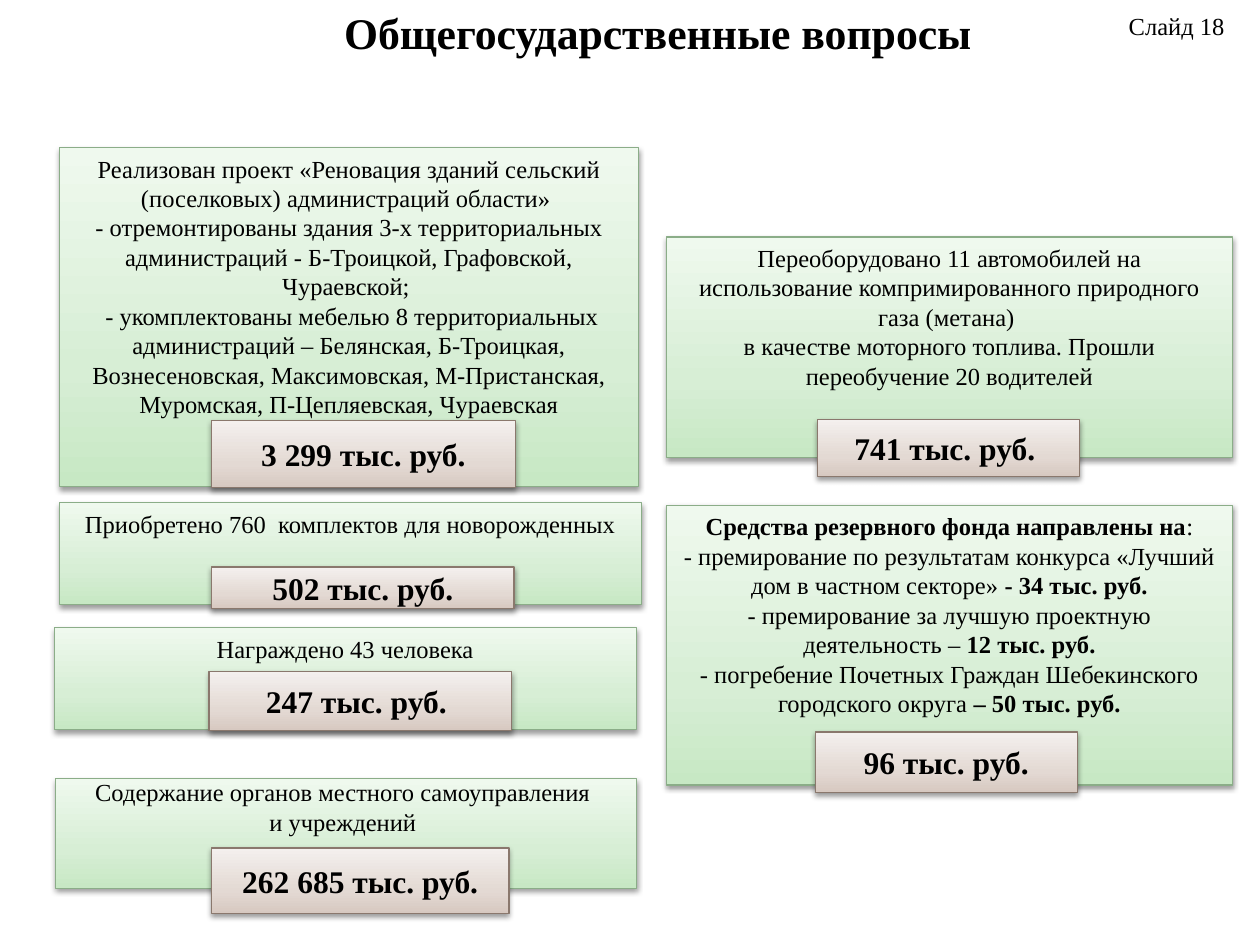
from copy import deepcopy

from lxml import etree
from pptx import Presentation
from pptx.dml.color import RGBColor
from pptx.enum.shapes import MSO_SHAPE
from pptx.enum.text import MSO_ANCHOR, MSO_AUTO_SIZE, PP_ALIGN
from pptx.oxml.ns import qn
from pptx.util import Pt

PX = 9144
RECTANGLE = MSO_SHAPE.RECTANGLE
TOP, MIDDLE = MSO_ANCHOR.TOP, MSO_ANCHOR.MIDDLE
LEFT, CENTER = PP_ALIGN.LEFT, PP_ALIGN.CENTER
NO_AUTOFIT = MSO_AUTO_SIZE.NONE

BLACK = RGBColor(0x00, 0x00, 0x00)
GREEN_LINE = RGBColor(0x8B, 0xAD, 0x88)
GREEN_STOPS = (RGBColor(0xC7, 0xE8, 0xC4), RGBColor(0xD7, 0xEE, 0xD5), RGBColor(0xEF, 0xF9, 0xEE))
BROWN_LINE = RGBColor(0x8A, 0x78, 0x6D)
BROWN_STOPS = (RGBColor(0xD7, 0xC9, 0xC1), RGBColor(0xE3, 0xD9, 0xD3), RGBColor(0xF4, 0xF0, 0xEE))
STOP_POSITIONS = (0, 0.35, 1)

FONT = "Times New Roman"
BODY = {"name": FONT, "size": Pt(14), "bold": False}
AMOUNT = {"name": FONT, "size": Pt(18), "bold": True}
HEADING = {"name": FONT, "size": Pt(25), "bold": True}

CARDS = [
    ((47, 117, 460, 269),
     [[("Реализован проект «Реновация зданий сельский (поселковых) администраций области» \n"
        "- отремонтированы здания 3-х территориальных администраций - Б-Троицкой, Графовской, Чураевской; \n"
        " - укомплектованы мебелью 8 территориальных администраций – Белянская, Б-Троицкая, "
        "Вознесеновская, Максимовская, М-Пристанская, Муромская, П-Цепляевская, Чураевская", False)]],
     "3 299 тыс. руб.", (121, 217, 241, 53), 5),
    ((529, 188, 449, 175),
     [[("Переоборудовано 11 автомобилей на использование компримированного природного газа (метана) ", False)],
      [("в качестве моторного топлива. Прошли переобучение 20 водителей", False)]],
     "741 тыс. руб. ", (120, 145, 208, 45), 5),
    ((47, 399, 462, 81),
     [[("Приобретено 760  комплектов для новорожденных", False)]],
     "502 тыс. руб.", (121, 51, 240, 33), 5),
    ((43, 498, 462, 81),
     [[("Награждено 43 человека", False)]],
     "247 тыс. руб. ", (123, 35, 240, 47), 5),
    ((529, 401, 449, 222),
     [[("Средства резервного фонда направлены на", True),
       (":\n- премирование по результатам конкурса «Лучший дом в частном секторе» ", False),
       ("- 34 тыс. руб.\n", True),
       ("- премирование за лучшую проектную деятельность – ", False),
       ("12 тыс. руб.\n", True),
       ("- погребение Почетных Граждан Шебекинского городского округа ", False),
       ("– 50 тыс. руб.", True)]],
     "96 тыс. руб.", (118, 180, 208, 48), 5),
    ((44, 618, 461, 87),
     [[("Содержание органов местного самоуправления ", False)],
      [("и учреждений ", False)]],
     "262 685 тыс. руб.", (124, 55, 236, 52), -1),
]


def emu(box):
    return [value * PX for value in box]


def write(frame, paragraphs, font, align, anchor, margin_top=5):
    settings = {"word_wrap": True, "auto_size": NO_AUTOFIT, "vertical_anchor": anchor,
                "margin_left": 10 * PX, "margin_right": 10 * PX,
                "margin_top": margin_top * PX, "margin_bottom": 5 * PX}
    for name, value in settings.items():
        setattr(frame, name, value)
    for index, runs in enumerate(paragraphs):
        paragraph = frame.add_paragraph() if index else frame.paragraphs[0]
        paragraph.alignment = align
        for text, bold in runs:
            for line_index, line in enumerate(text.split("\n")):
                if line_index:
                    paragraph.add_line_break()
                if line:
                    run = paragraph.add_run()
                    run.text = line
                    for name, value in {**font, "bold": bold}.items():
                        setattr(run.font, name, value)
                    run.font.color.rgb = BLACK


def add_panel(slide, box, stops, line_color):
    panel = slide.shapes.add_shape(RECTANGLE, *emu(box))
    panel.fill.gradient()
    panel.fill.gradient_angle = 90
    properties = panel._element.spPr
    stop_list = properties.find(qn("a:gradFill")).find(qn("a:gsLst"))
    stop_list.append(deepcopy(stop_list[-1]))
    for stop, color, position in zip(panel.fill.gradient_stops, stops, STOP_POSITIONS):
        stop.color.rgb = color
        stop.position = position
    panel.line.color.rgb = line_color
    panel.line.width = Pt(0.75)
    panel.shadow.inherit = False
    shadow = etree.SubElement(properties.find(qn("a:effectLst")), qn("a:outerShdw"),
                              blurRad=str(Pt(3.1)), dist=str(Pt(1.6)), dir="5400000", rotWithShape="0")
    shade = etree.SubElement(shadow, qn("a:srgbClr"), val=str(BLACK))
    etree.SubElement(shade, qn("a:alpha"), val="38000")
    return panel


def add_card(slide, box, paragraphs, amount, amount_box, margin_top):
    left, top = box[:2]
    card = add_panel(slide, box, GREEN_STOPS, GREEN_LINE)
    write(card.text_frame, paragraphs, BODY, CENTER, TOP, margin_top)
    dx, dy, width, height = amount_box
    plate = add_panel(slide, (left + dx, top + dy, width, height), BROWN_STOPS, BROWN_LINE)
    write(plate.text_frame, [[(amount, True)]], AMOUNT, CENTER, MIDDLE)


def add_header(slide, box):
    left, top, width, height = box
    title = slide.shapes.title
    place = dict(zip(("left", "top", "width", "height"), emu((left, top, 850, height))))
    for name, value in place.items():
        setattr(title, name, value)
    write(title.text_frame, [[("Общегосударственные вопросы", True)]], HEADING, CENTER, MIDDLE)
    indent = title.text_frame.paragraphs[0]._p.get_or_add_pPr()
    indent.set("marL", str(20 * PX))
    indent.set("indent", "0")
    number = slide.shapes.add_textbox(*emu((left + width - 98, top, 98, 34)))
    write(number.text_frame, [[("Слайд 18", False)]], BODY, LEFT, TOP)


def main():
    presentation = Presentation()
    presentation.slide_width = 1000 * PX
    presentation.slide_height = 750 * PX
    slide = presentation.slides.add_slide(presentation.slide_layouts[0])
    subtitle = slide.placeholders[1]._element
    subtitle.getparent().remove(subtitle)
    add_header(slide, (87, 4, 897, 43))
    for card in CARDS:
        add_card(slide, *card)
    presentation.save("out.pptx")


if __name__ == "__main__":
    main()
